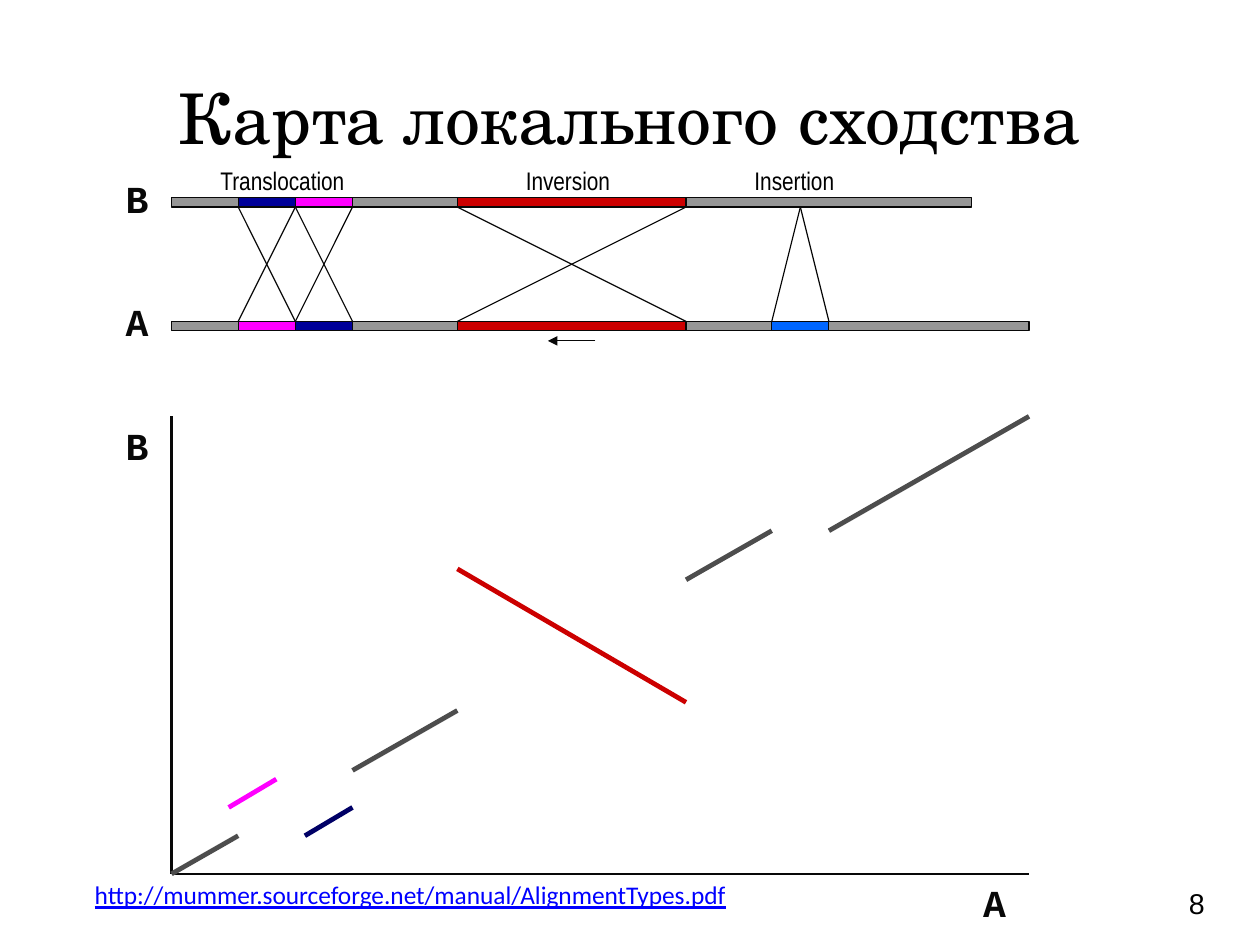
import pptx
import pptx.dml.color
import pptx.enum.shapes
import pptx.enum.text
import pptx.oxml
import pptx.oxml.ns
import pptx.util
from lxml import etree

Inches = pptx.util.Inches
Pt = pptx.util.Pt

INK, GREY, DARK_GREY = "080808", "969696", "4D4D4D"
NAVY, MAGENTA, RED, BLUE = "000099", "FF00FF", "CC0000", "0066FF"

# Genome positions are counted in twelfths of an inch from the left axis.
LEFT, UNIT = 1.5, 1 / 12
LENGTH_A, LENGTH_B = 90, 84
BAR_HEIGHT = 0.08
BAR_TOP = {"B": 1.73, "A": 2.81}
PLOT_BOTTOM, PLOT_HEIGHT = 7.64, 4

presentation = pptx.Presentation()
presentation.slide_width = Inches(11.02)
presentation.slide_height = Inches(8.27)
slide = presentation.slides.add_slide(presentation.slide_layouts[5])


def rgb(value):
    return pptx.dml.color.RGBColor.from_string(value)


def add_line(start, end, color, width):
    """Draw a straight line between two (genome position, inches from top) points."""
    line = slide.shapes.add_connector(
        pptx.enum.shapes.MSO_CONNECTOR.STRAIGHT,
        Inches(LEFT + start[0] * UNIT), Inches(start[1]),
        Inches(LEFT + end[0] * UNIT), Inches(end[1]))
    line.line.color.rgb = rgb(color)
    line.line.width = Pt(width)
    etree.SubElement(line._element.spPr, pptx.oxml.ns.qn("a:effectLst"))
    return line


# Title
title = slide.shapes.title
title.left, title.top, title.width, title.height = map(Inches, (0.55, 0.33, 9.92, 1.38))
heading = title.text_frame
heading.margin_left = heading.margin_right = heading.margin_top = heading.margin_bottom = 0
heading.word_wrap = False
heading.vertical_anchor = pptx.enum.text.MSO_ANCHOR.MIDDLE
heading.paragraphs[0].alignment = pptx.enum.text.PP_ALIGN.CENTER
heading_run = heading.paragraphs[0].add_run()
heading_run.text = "Карта локального сходства"
heading_run.font.name = "TeX Gyre Schola"
heading_run.font.size = Pt(44)
heading_run.font.color.rgb = rgb("000000")

# Aligned genomes: a grey bar with coloured regions on top
regions = [
    ("B", 0, LENGTH_B, GREY), ("B", 7, 13, NAVY), ("B", 13, 19, MAGENTA), ("B", 30, 54, RED),
    ("A", 0, LENGTH_A, GREY), ("A", 7, 13, MAGENTA), ("A", 13, 19, NAVY), ("A", 30, 54, RED),
    ("A", 63, 69, BLUE),
]
for genome, start, end, color in regions:
    region = slide.shapes.add_shape(
        pptx.enum.shapes.MSO_SHAPE.RECTANGLE,
        Inches(LEFT + start * UNIT), Inches(BAR_TOP[genome]),
        Inches((end - start) * UNIT), Inches(BAR_HEIGHT))
    region.shadow.inherit = False
    region.fill.solid()
    region.fill.fore_color.rgb = rgb(color)
    region.line.color.rgb = rgb(INK)
    region.line.width = Pt(0.75)

# Matching positions in B and A: translocation, inversion, insertion
for position_b, position_a in [(7, 13), (13, 19), (13, 7), (19, 13),
                               (30, 54), (54, 30), (66, 63), (66, 69)]:
    add_line((position_b, BAR_TOP["B"] + BAR_HEIGHT), (position_a, BAR_TOP["A"]), INK, 0.75)

inversion_arrow = add_line((44.5, 2.98), (39.5, 2.98), INK, 0.75)
etree.SubElement(inversion_arrow.line._get_or_add_ln(),
                 pptx.oxml.ns.qn("a:tailEnd"), type="triangle")

# Dot plot: axes, then matching segments as (A, B) positions
origin = (0, PLOT_BOTTOM)
add_line(origin, (LENGTH_A, PLOT_BOTTOM), INK, 1.5)
add_line(origin, (0, PLOT_BOTTOM - PLOT_HEIGHT), INK, 1.5)

matches = [
    ((0, 0), (7, 7), DARK_GREY),
    ((19, 19), (30, 30), DARK_GREY),
    ((54, 54), (63, 63), DARK_GREY),
    ((69, 63), (90, 84), DARK_GREY),
    ((54, 31.5), (30, 56), RED),
    ((6, 12.2), (11, 17.4), MAGENTA),
    ((14, 7), (19, 12.2), "000066"),
]
for start, end, color in matches:
    start, end = [(a, PLOT_BOTTOM - b * PLOT_HEIGHT / LENGTH_B) for a, b in (start, end)]
    add_line(start, end, color, 3)

# Labels: text, left, top, width, height, font, size, colour
genome_style = (0.5, 0.5, "Courier New", 24, INK)
event_style = (0.36, "Arial Narrow", 16, "000000")
labels = [
    ("B", 1, BAR_TOP["B"] - 0.25, *genome_style),
    ("A", 1, BAR_TOP["A"] - 0.25, *genome_style),
    ("B", 1, PLOT_BOTTOM - PLOT_HEIGHT, *genome_style),
    ("A", 8.5, PLOT_BOTTOM, *genome_style),
    ("Translocation", 1.83, 1.39, 1.5, *event_style),
    ("Inversion", 4.5, 1.39, 1.08, *event_style),
    ("Insertion", 6.5, 1.39, 1.08, *event_style),
    ("http://mummer.sourceforge.net/manual/AlignmentTypes.pdf",
     0.73, PLOT_BOTTOM, 6.85, 0.36, "Calibri", 16, "0000FF"),
    ("8", 10.3, 7.7, 0.6, 0.47, "Arial", 18, "000000"),
]
for text, left, top, width, height, font, size, color in labels:
    label = slide.shapes.add_textbox(*map(Inches, (left, top, width, height))).text_frame
    label.word_wrap = font != "Calibri"
    run = label.paragraphs[0].add_run()
    run.text = text
    run.font.name = font
    run.font.size = Pt(size)
    run.font.bold = font == "Courier New"
    run.font.underline = font == "Calibri"
    run.font.color.rgb = rgb(color)

presentation.save("out.pptx")
